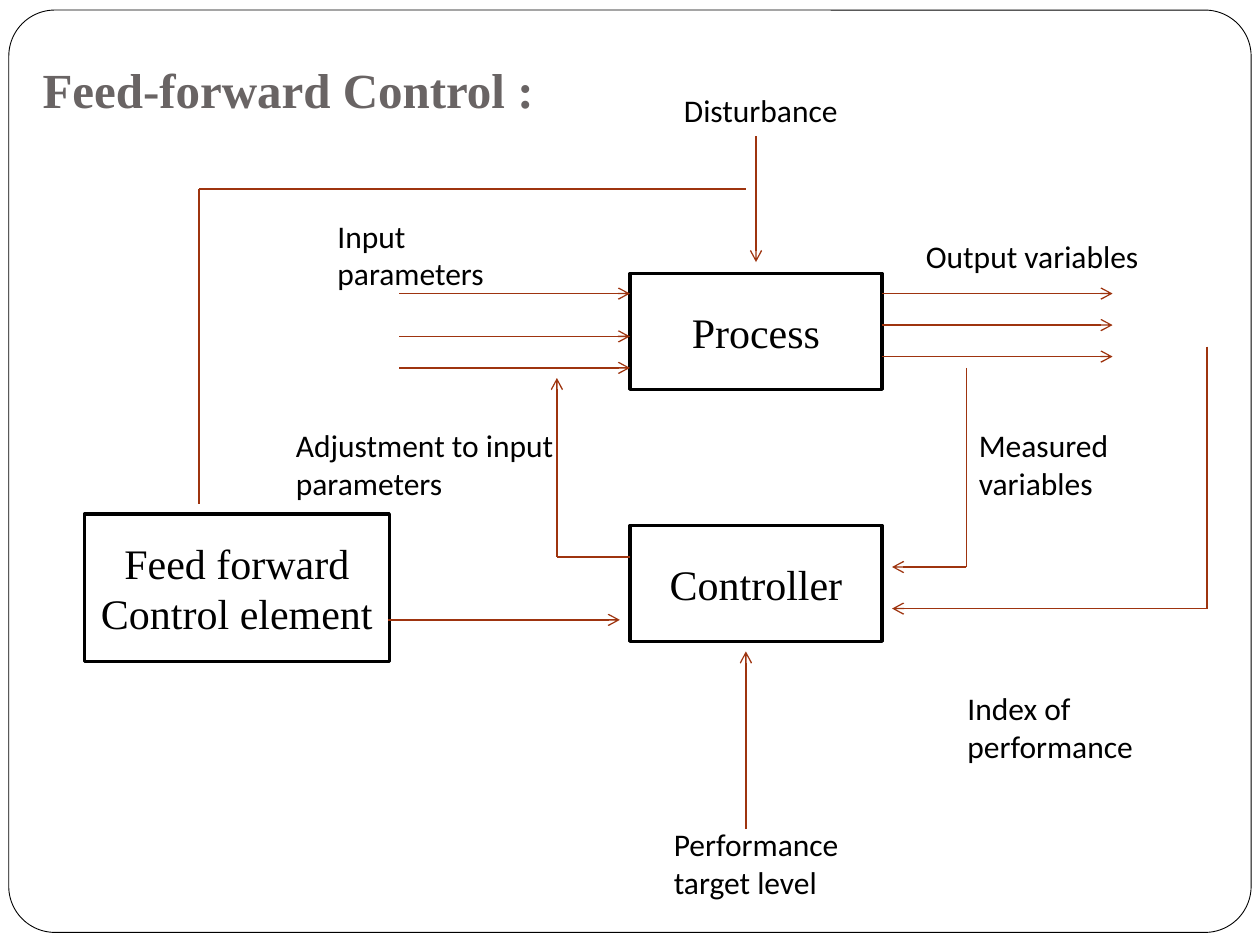
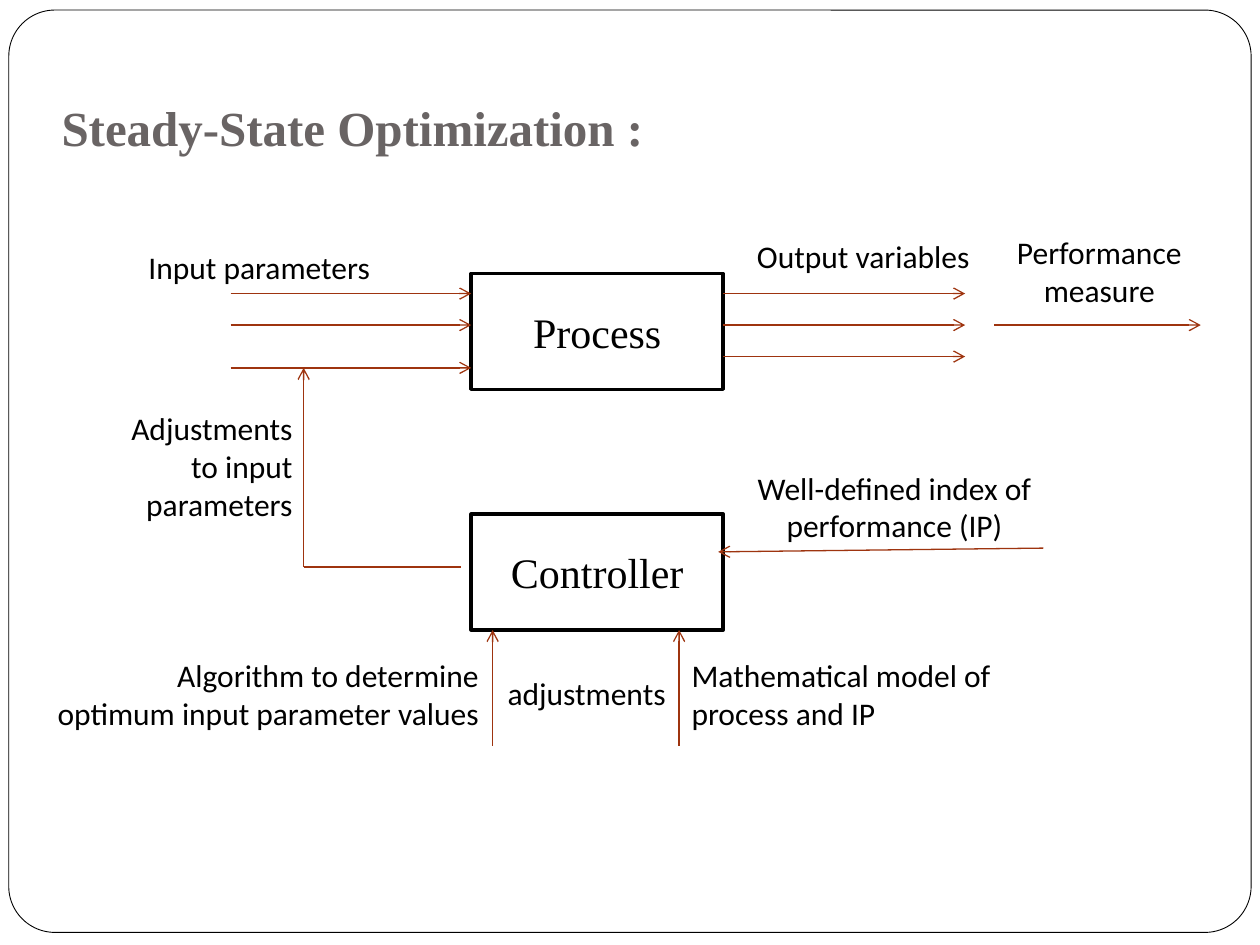
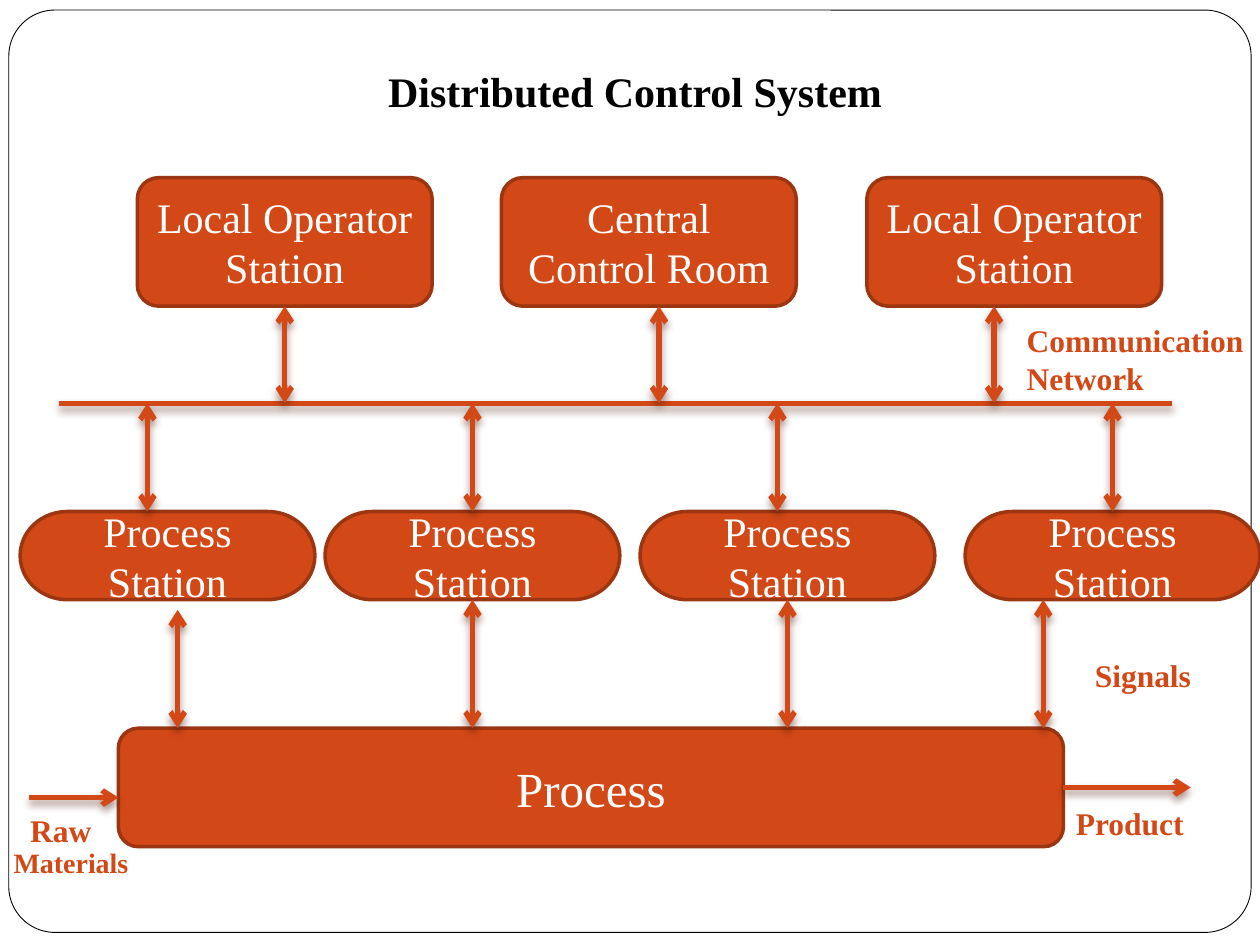
from pptx import Presentation
from pptx.dml.color import RGBColor
from pptx.enum.shapes import MSO_CONNECTOR, MSO_SHAPE as SHAPE
from pptx.enum.text import MSO_ANCHOR as ANCHOR, PP_ALIGN as ALIGN
from pptx.oxml import parse_xml
from pptx.oxml.ns import nsdecls
from pptx.util import Emu, Pt

PX = 9144
BLACK = RGBColor(0x00, 0x00, 0x00)
WHITE = RGBColor(0xFF, 0xFF, 0xFF)
GREY = RGBColor(0x69, 0x64, 0x64)
ORANGE = RGBColor(0xD3, 0x48, 0x17)
RUST = RGBColor(0x9C, 0x35, 0x11)
BROWN = RGBColor(0x9E, 0x34, 0x0F)
SERIF, SANS = "Times New Roman", "Calibri"
SHADOW = (
    '<a:outerShdw blurRad="57150" dist="38100" dir="5400000" algn="ctr" rotWithShape="0">'
    '<a:srgbClr val="4C1806"><a:alpha val="48000"/></a:srgbClr></a:outerShdw>'
)


def add_box(s, box, text, size=18, color=BLACK, font=SANS, bold=False, align=ALIGN.LEFT,
            anchor=ANCHOR.TOP, kind=None, fill=WHITE, edge=BLACK, weight=2):
    x, y, w, h = [Emu(n * PX) for n in box]
    if kind is None:
        sp = s.shapes.add_textbox(x, y, w, h)
    else:
        sp = s.shapes.add_shape(kind, x, y, w, h)
        sp.shadow.inherit = False
        sp.fill.solid()
        sp.fill.fore_color.rgb = fill
        sp.line.color.rgb = edge
        sp.line.width = Pt(weight)
        align, anchor = ALIGN.CENTER, ANCHOR.MIDDLE
    tf = sp.text_frame
    tf.word_wrap = True
    tf.vertical_anchor = anchor
    for i, row in enumerate(text.split("\n") if text else []):
        p = tf.add_paragraph() if i else tf.paragraphs[0]
        p.alignment = align
        r = p.add_run()
        r.text = row
        r.font.size = Pt(size)
        r.font.name = font
        r.font.bold = bold
        r.font.color.rgb = color
    return sp


def add_line(s, ends, heads="", color=BROWN, weight=0.75, effect="", begin=None, end=None):
    cx = s.shapes.add_connector(MSO_CONNECTOR.STRAIGHT, *[Emu(n * PX) for n in ends])
    if begin:
        cx.begin_connect(*begin)
    if end:
        cx.end_connect(*end)
    cx.line.color.rgb = color
    cx.line.width = Pt(weight)
    ln = cx.line._get_or_add_ln()
    for mark, tag in (("<", "headEnd"), (">", "tailEnd")):
        if mark in heads:
            ln.append(parse_xml(f'<a:{tag} {nsdecls("a")} type="arrow"/>'))
    cx._element.spPr.append(parse_xml(f'<a:effectLst {nsdecls("a")}>{effect}</a:effectLst>'))


prs = Presentation()
prs.slide_width, prs.slide_height = Emu(1000 * PX), Emu(750 * PX)
slides = [prs.slides.add_slide(prs.slide_layouts[6]) for _ in range(3)]
for s in slides:
    frame = add_box(s, (7, 8, 986, 732), "", kind=SHAPE.ROUNDED_RECTANGLE, weight=0.5)
    frame.adjustments[0] = 0.05

titles = [
    ((24, 29, 850, 75), "Feed-forward Control :"),
    ((39, 67, 850, 67), "Steady-State Optimization :"),
]
for s, (box, text) in zip(slides, titles):
    sp = add_box(s, box, text, 28, GREY, SERIF, True, anchor=ANCHOR.BOTTOM)
    sp.text_frame.margin_bottom = Emu(10 * PX)

block = dict(size=24, font=SERIF, kind=SHAPE.RECTANGLE)

s = slides[0]
add_box(s, (500, 217, 200, 92), "Process", **block)
add_box(s, (67, 408, 242, 117), "Feed forward\nControl element", **block)
add_box(s, (500, 417, 200, 92), "Controller", **block)
for y in (233, 258, 283):
    add_line(s, (700, y, 883, y), ">")
for y in (233, 267, 292):
    add_line(s, (317, y, 500, y), ">")
for ends, heads in [
    ((308, 492, 492, 492), ">"),
    ((500, 442, 442, 442), ""),
    ((442, 442, 442, 300), ">"),
    ((592, 658, 592, 517), ">"),
    ((958, 275, 958, 483), ""),
    ((958, 483, 708, 483), ">"),
    ((767, 292, 767, 450), ""),
    ((767, 450, 708, 450), ">"),
    ((600, 108, 600, 208), ">"),
    ((592, 150, 158, 150), ""),
    ((158, 150, 158, 400), ""),
]:
    add_line(s, ends, heads)
for box, text in [
    ((525, 650, 200, 71), "Performance target level"),
    ((758, 542, 167, 71), "Index of performance"),
    ((725, 183, 200, 40), "Output variables"),
    ((533, 67, 167, 40), "Disturbance"),
    ((767, 333, 192, 71), "Measured variables"),
    ((258, 167, 183, 71), "Input parameters"),
    ((225, 333, 225, 71), "Adjustment to input parameters"),
]:
    add_box(s, box, text)

s = slides[1]
add_box(s, (374, 217, 200, 92), "Process", **block)
add_box(s, (374, 408, 200, 92), "Controller", **block)
for y in (233, 258, 283):
    add_line(s, (574, y, 766, y), ">")
for y in (233, 258, 292):
    add_line(s, (183, y, 374, y), ">")
for x in (391, 539):
    add_line(s, (x, 592, x, 500), ">")
for ends, heads in [
    ((789, 258, 953, 258), ">"),
    ((241, 450, 241, 292), ">"),
    ((241, 450, 366, 450), ""),
    ((828, 435, 570, 438), ">"),
]:
    add_line(s, ends, heads)
for box, text, align in [
    ((393, 530, 154, 40), "adjustments", ALIGN.LEFT),
    ((108, 192, 217, 40), "Input parameters", ALIGN.LEFT),
    ((591, 183, 200, 40), "Output variables", ALIGN.LEFT),
    ((84, 320, 158, 101), "Adjustments to input parameters", ALIGN.RIGHT),
    ((555, 367, 310, 71), "Well-defined index of performance (IP)", ALIGN.CENTER),
    ((781, 180, 183, 71), "Performance measure", ALIGN.CENTER),
    ((539, 516, 273, 71), "Mathematical model of process and IP", ALIGN.LEFT),
    ((23, 516, 367, 71), "Algorithm to determine\noptimum input parameter values", ALIGN.RIGHT),
]:
    add_box(s, box, text, align=align)

s = slides[2]
add_box(s, (203, 47, 602, 50), "Distributed Control System", 24, BLACK, SERIF, True, ALIGN.CENTER)
block = dict(color=WHITE, font=SERIF, fill=ORANGE, edge=RUST)
wire = dict(color=ORANGE, weight=3, effect=SHADOW)
rooms = [
    add_box(s, (x, 141, 234, 102), text, 24, kind=SHAPE.FLOWCHART_ALTERNATE_PROCESS, **block)
    for x, text in [
        (109, "Local Operator Station"),
        (398, "Central Control Room"),
        (688, "Local Operator Station"),
    ]
]
stations = [
    add_box(s, (x, 406, 234, 70), "Process Station", 24, kind=SHAPE.FLOWCHART_TERMINATOR, **block)
    for x in (16, 258, 508, 766)
]
process = add_box(s, (94, 578, 750, 94), "Process", 28,
                  kind=SHAPE.FLOWCHART_ALTERNATE_PROCESS, **block)

add_line(s, (930, 320, 47, 320), **wire)
for x, begin in [(226, (rooms[0], 2)), (523, None), (789, None)]:
    add_line(s, (x, 243, x, 320), "<>", begin=begin, **wire)
for x, end in [(117, None), (375, (stations[1], 0)), (617, None), (883, (stations[3], 0))]:
    add_line(s, (x, 320, x, 406), "<>", end=end, **wire)
for x, y, begin in [
    (141, 484, None),
    (375, 476, (stations[1], 2)),
    (625, 476, (stations[2], 2)),
    (828, 476, None),
]:
    add_line(s, (x, y, x, 578), "<>", begin=begin, **wire)
add_line(s, (844, 625, 945, 625), ">", begin=(process, 3), **wire)
add_line(s, (23, 633, 94, 633), ">", **wire)

for box, text, size in [
    ((805, 250, 195, 71), "Communication\nNetwork", 18),
    ((844, 633, 109, 40), "Product", 18),
    ((14, 639, 111, 40), "Raw", 18),
    ((1, 666, 131, 37), "Materials", 16),
    ((859, 516, 141, 40), "Signals", 18),
]:
    add_box(s, box, text, size, ORANGE, SERIF, True)

prs.save("out.pptx")
